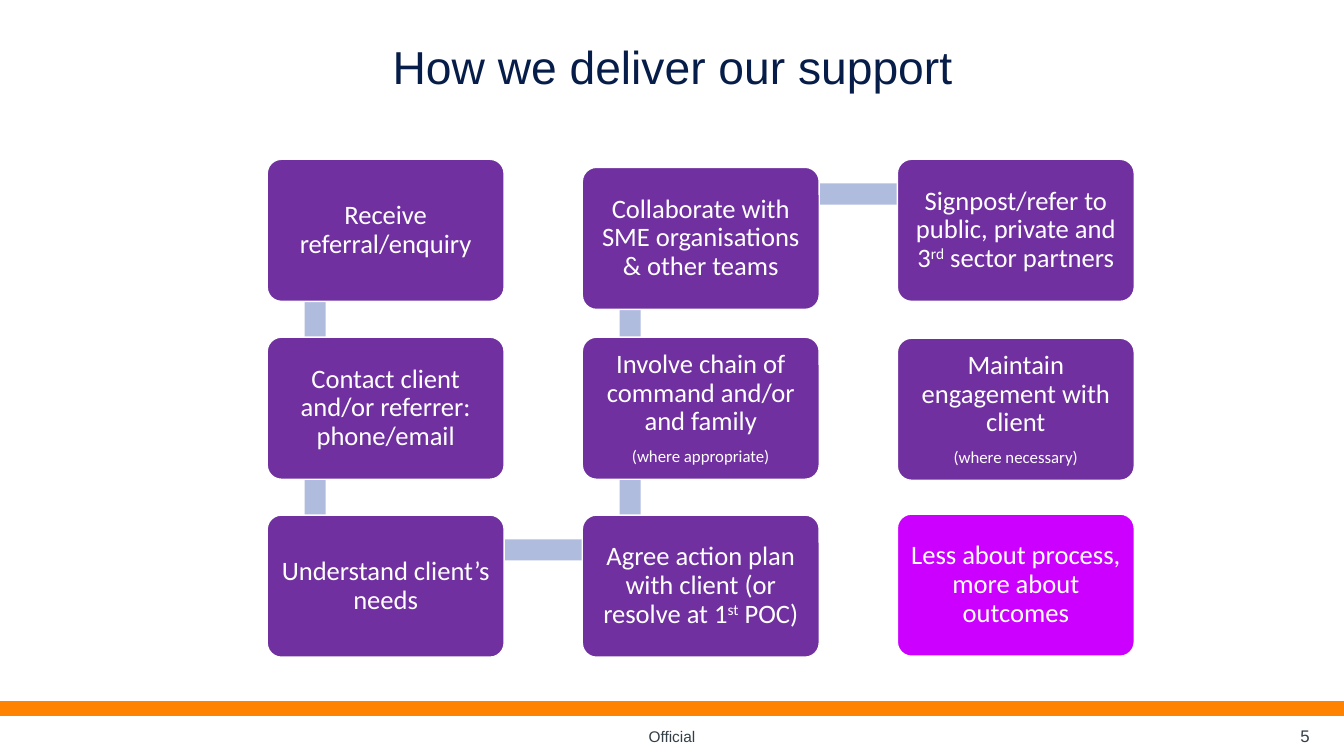
from lxml.etree import SubElement
from pptx import Presentation
from pptx.dml.color import RGBColor
from pptx.enum.shapes import MSO_CONNECTOR, MSO_SHAPE
from pptx.enum.text import MSO_ANCHOR, MSO_AUTO_SIZE, PP_ALIGN
from pptx.oxml.ns import qn
from pptx.util import Inches, Pt


def paint(color_format, hex_value):
    color_format.rgb = RGBColor.from_string(hex_value)


def write(frame, paragraphs, font_name, color, frame_format, paragraph_format):
    for name, value in frame_format.items():
        setattr(frame, name, value)
    for index, (size, pieces) in enumerate(paragraphs):
        paragraph = frame.add_paragraph() if index else frame.paragraphs[0]
        for name, value in paragraph_format.items():
            setattr(paragraph, name, value)
        for position, piece in enumerate(pieces):
            run = paragraph.add_run()
            run.text = piece
            for name, value in {"name": font_name, "size": Pt(size)}.items():
                setattr(run.font, name, value)
            paint(run.font.color, color)
            if position % 2:
                run._r.get_or_add_rPr().set("baseline", "30000")


deck = Presentation()
deck.slide_width, deck.slide_height = Inches(13.33), Inches(7.5)
slide = deck.slides.add_slide(deck.slide_layouts[5])

margins = ("margin_left", "margin_top", "margin_right", "margin_bottom")
plain_frame = {"word_wrap": True, "auto_size": MSO_AUTO_SIZE.NONE, **dict.fromkeys(margins, 0)}
step_frame = {
    **plain_frame,
    **dict.fromkeys(margins, Inches(0.08)),
    "vertical_anchor": MSO_ANCHOR.MIDDLE,
}
step_paragraph = {"alignment": PP_ALIGN.CENTER, "line_spacing": 0.9, "space_after": Pt(8)}

heading = slide.shapes.title
heading_place = {"left": 0.39, "top": 0.47, "width": 12.56, "height": 0.43}
for name, value in heading_place.items():
    setattr(heading, name, Inches(value))
write(heading.text_frame, [(33, ["How we deliver our support"])], "Arial", "071D49",
      {**plain_frame, "vertical_anchor": MSO_ANCHOR.MIDDLE},
      {"alignment": PP_ALIGN.CENTER, "line_spacing": 0.9})

footer_rule = slide.shapes.add_connector(
    MSO_CONNECTOR.STRAIGHT, 0, Inches(7.03), Inches(13.33), Inches(7.03))
footer_rule.line.width = Pt(11)
paint(footer_rule.line.color, "FF8200")
SubElement(footer_rule._element.spPr, qn("a:effectLst"))

footers = [
    ("5", 12, PP_ALIGN.RIGHT, 11.81, 7.2, 1.18, 0.2),
    ("Official", 11, PP_ALIGN.CENTER, 1.94, 7.21, 9.45, 0.19),
]
for wording, size, alignment, *place in footers:
    footer = slide.shapes.add_textbox(*map(Inches, place))
    write(footer.text_frame, [(size, [wording])], "Arial", "333F47",
          {**plain_frame, "vertical_anchor": MSO_ANCHOR.BOTTOM}, {"alignment": alignment})

column_lefts = [2.65 + 3.125 * column for column in range(3)]
row_tops = [1.58 + 1.765 * row for row in range(3)]
step_width, step_height, link_size = 2.35, 1.41, 0.21

links = [(left + 0.37, top + 0.35, link_size, 1.75)
         for left in column_lefts[:2] for top in row_tops[:2]]
links += [(column_lefts[0] + 0.48, row_tops[2] + 0.24, 3.12, link_size),
          (column_lefts[1] + 0.48, row_tops[0] + 0.24, 3.12, link_size)]
for place in links:
    link = slide.shapes.add_shape(MSO_SHAPE.RECTANGLE, *map(Inches, place))
    link.shadow.inherit = False
    link.fill.solid()
    paint(link.fill.fore_color, "B0BCDE")
    link.line.fill.background()

purple, magenta = "7030A0", "CC00FF"
steps = [
    (0, 0, 0, purple, [(19, ["Receive referral/enquiry"])]),
    (0, 1, 0, purple, [(19, ["Contact client and/or referrer: phone/email"])]),
    (0, 2, 0, purple, [(19, ["Understand client’s needs"])]),
    (1, 2, 0, purple, [(19, ["Agree action plan with client (or resolve at 1", "st", " POC)"])]),
    (1, 1, 0, purple, [(19, ["Involve chain of command and/or and family"]),
                       (12, ["(where appropriate)"])]),
    (1, 0, 0.08, purple, [(19, ["Collaborate with SME organisations & other teams"])]),
    (2, 0, 0, purple, [(19, ["Signpost/refer to public, private and 3", "rd", " sector partners"])]),
    (2, 1, 0.01, purple, [(19, ["Maintain engagement with client"]),
                          (12, ["(where necessary)"])]),
    (2, 2, -0.01, magenta, [(19, ["Less about process, more about outcomes"])]),
]
for column, row, drop, color, paragraphs in steps:
    step = slide.shapes.add_shape(
        MSO_SHAPE.ROUNDED_RECTANGLE, Inches(column_lefts[column]), Inches(row_tops[row] + drop),
        Inches(step_width), Inches(step_height))
    step.adjustments[0] = 0.1
    step.shadow.inherit = False
    step.fill.solid()
    paint(step.fill.fore_color, color)
    step.line.width = Pt(1)
    paint(step.line.color, "FFFFFF")
    write(step.text_frame, paragraphs, "Calibri", "FFFFFF", step_frame, step_paragraph)

deck.save("out.pptx")
